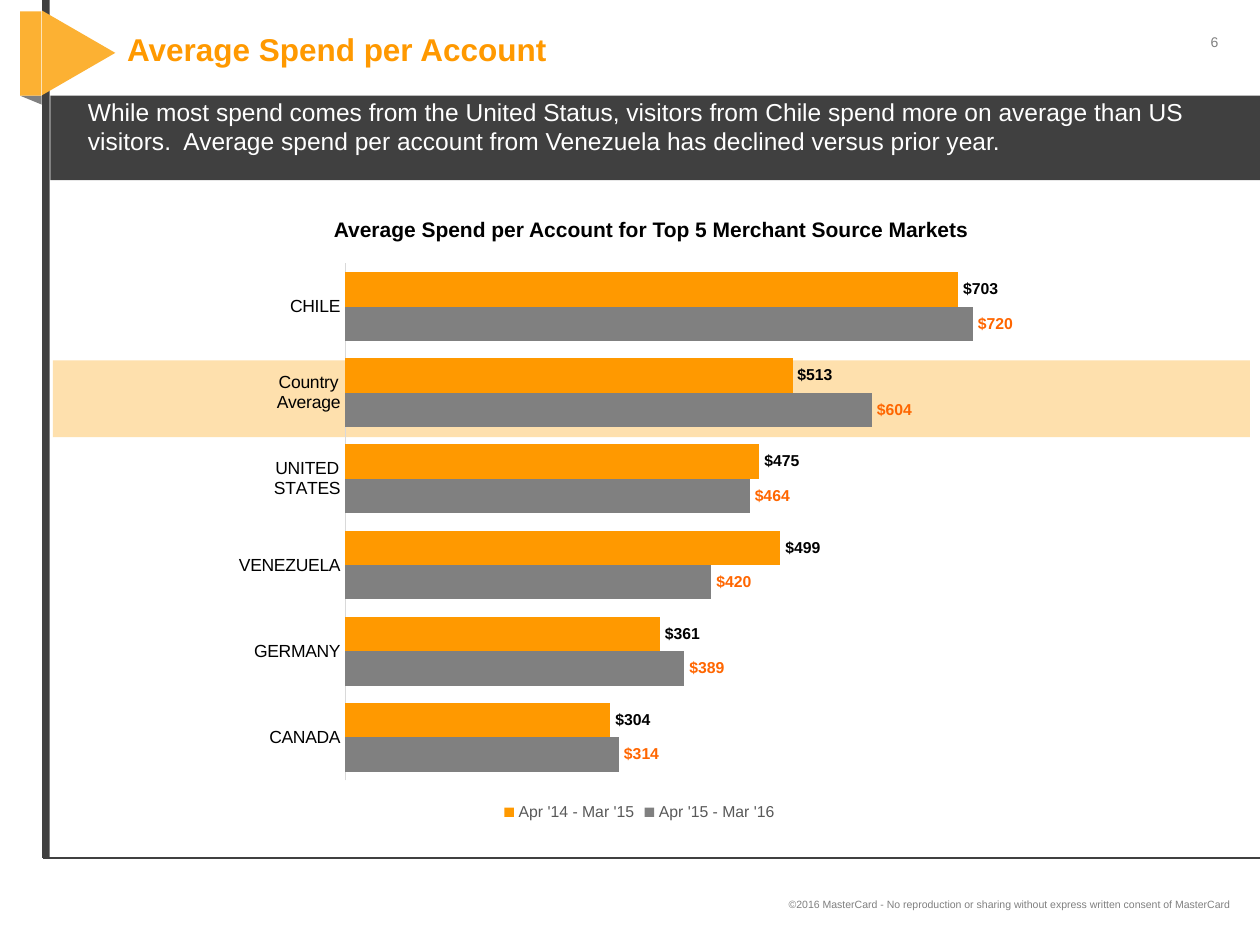
"""Build the average spend per account slide with its clustered bar chart."""
from lxml import etree
from pptx import Presentation, util as u
from pptx.chart.data import CategoryChartData
from pptx.dml.color import RGBColor
from pptx.enum import chart as ec, shapes as es, text as et
from pptx.oxml import parse_xml
from pptx.oxml.ns import nsdecls, qn

ORANGE = RGBColor(0xFF, 0x99, 0x00)
AMBER = RGBColor(0xFC, 0xB1, 0x33)
CREAM = RGBColor(0xFE, 0xE0, 0xAD)
DARK = RGBColor(0x40, 0x40, 0x40)
GREY = RGBColor(0x80, 0x80, 0x80)
LEGEND_GREY = RGBColor(0x59, 0x59, 0x59)
AXIS_GREY = RGBColor(0xD9, 0xD9, 0xD9)
RED_ORANGE = RGBColor(0xFF, 0x66, 0x00)
BLACK = RGBColor(0, 0, 0)
WHITE = RGBColor(0xFF, 0xFF, 0xFF)

COLUMNS, ROWS = 100, 75
CELL = u.Inches(0.1)
FONT = "Arial"
DOLLARS = '"$"#,##0'

LEFT, CENTER, RIGHT = et.PP_ALIGN.LEFT, et.PP_ALIGN.CENTER, et.PP_ALIGN.RIGHT
TOP, MIDDLE = et.MSO_ANCHOR.TOP, et.MSO_ANCHOR.MIDDLE
FORM = es.MSO_SHAPE

BLOCKS = [
    (FORM.RECTANGLE, (3.35, 0, 0.6, 68.1), 0, DARK),
    (FORM.RIGHT_TRIANGLE, (2.1, 7.1, 0.7, 1.7), 270, GREY),
    (FORM.ISOSCELES_TRIANGLE, (2.9, 1.3, 6.7, 5.8), 90, AMBER),
    (FORM.RECTANGLE, (1.6, 0.9, 1.7, 6.7), 0, AMBER),
    (FORM.RECTANGLE, (4.2, 28.6, 95, 6.1), 0, CREAM),
    (FORM.RECTANGLE, (4, 7.6, 96, 6.7), 0, DARK),
]
BASELINE = (3.4, 68.1, 100, 68.1)

TEXTS = [
    ("6", (94.7, 2.2, 3.4, 2.4), CENTER, TOP, {"size": 8, "color": GREY}),
    ("©2016 MasterCard - No reproduction or sharing without express written consent of MasterCard",
     (1.1, 69.1, 97.5, 5.4), RIGHT, MIDDLE, {"size": 6, "color": GREY}),
    ("While most spend comes from the United Status, visitors from Chile spend more on average "
     "than US visitors.  Average spend per account from Venezuela has declined versus prior year.",
     (6, 7.2, 93, 6.6), LEFT, TOP, {"size": 14, "color": WHITE}),
    ("Average Spend per Account", (9.1, 0.9, 79.2, 6.7), LEFT, MIDDLE,
     {"size": 18, "color": ORANGE, "bold": True}),
    ("Average Spend per Account for Top 5 Merchant Source Markets", (23.4, 17.2, 56.6, 2),
     CENTER, MIDDLE, {"size": 12, "color": BLACK, "bold": True}),
]

MARKETS = ["CANADA", "GERMANY", "VENEZUELA", "UNITED STATES", "Country Average", "CHILE"]
SPEND = [
    ("Apr '15 - Mar '16", (314, 389, 420, 464, 604, 720), GREY, RED_ORANGE),
    ("Apr '14 - Mar '15", (304, 361, 499, 475, 513, 703), ORANGE, BLACK),
]
CHART_AREA = (17.4, 20, 66.7, 45.6)
PLOT_SHARES = {"x": 0.15, "y": 0.02, "w": 0.83, "h": 0.9}


def cells(area):
    return [int(length * CELL) for length in area]


def set_font(font, size, color, bold=False):
    for name, value in {"name": FONT, "size": u.Pt(size), "bold": bold}.items():
        setattr(font, name, value)
    font.color.rgb = color


def add_block(slide, form, area, turn, color):
    block = slide.shapes.add_shape(form, *cells(area))
    block.shadow.inherit = False
    block.rotation = turn
    block.fill.solid()
    block.fill.fore_color.rgb = color
    block.line.fill.background()
    if form == FORM.RIGHT_TRIANGLE:
        block.element.spPr.find(qn("a:xfrm")).set("flipH", "1")


def add_baseline(slide):
    baseline = slide.shapes.add_connector(es.MSO_CONNECTOR.STRAIGHT, *cells(BASELINE))
    baseline.line.color.rgb = DARK
    baseline.line.width = u.Pt(0.75)
    etree.SubElement(baseline.element.spPr, qn("a:effectLst"))


def add_text(slide, wording, area, align, anchor, style):
    frame = slide.shapes.add_textbox(*cells(area)).text_frame
    frame.word_wrap = True
    frame.vertical_anchor = anchor
    if area[3] == 2:
        for side in ("left", "top", "right", "bottom"):
            setattr(frame, f"margin_{side}", 0)
    paragraph = frame.paragraphs[0]
    paragraph.alignment = align
    if style["size"] == 18:
        paragraph.line_spacing = u.Pt(16)
    run = paragraph.add_run()
    run.text = wording
    set_font(run.font, **style)


def add_spend_chart(slide):
    data = CategoryChartData(number_format=DOLLARS)
    data.categories = MARKETS
    for period, values, _, _ in SPEND:
        data.add_series(period, values)
    chart = slide.shapes.add_chart(
        ec.XL_CHART_TYPE.BAR_CLUSTERED, *cells(CHART_AREA), data).chart
    set_font(chart.font, 10, BLACK)
    chart.has_title = False
    chart.has_legend = True
    chart.legend.position = ec.XL_LEGEND_POSITION.BOTTOM
    chart.legend.include_in_layout = False
    set_font(chart.legend.font, 9, LEGEND_GREY)

    markets, dollars = chart.category_axis, chart.value_axis
    markets.major_tick_mark = markets.minor_tick_mark = ec.XL_TICK_MARK.NONE
    markets.format.line.color.rgb = AXIS_GREY
    markets.format.line.width = u.Pt(0.75)
    set_font(markets.tick_labels.font, 10, BLACK)
    for name, value in {"minimum_scale": 0, "maximum_scale": 800,
                        "has_major_gridlines": False, "visible": False}.items():
        setattr(dollars, name, value)
    dollars.tick_labels.number_format = DOLLARS
    dollars.tick_labels.number_format_is_linked = False

    plot = chart.plots[0]
    plot.gap_width, plot.overlap, plot.vary_by_categories = 50, 0, False
    for series, (_, _, color, label_color) in zip(plot.series, SPEND):
        series.format.fill.solid()
        series.format.fill.fore_color.rgb = color
        labels = series.data_labels
        for name, value in {"show_value": True, "number_format": DOLLARS,
                            "number_format_is_linked": False,
                            "position": ec.XL_LABEL_POSITION.OUTSIDE_END}.items():
            setattr(labels, name, value)
        set_font(labels.font, 9, label_color, True)

    modes = "".join(f'<c:{side}Mode val="edge"/>' for side in "xy")
    shares = "".join(f'<c:{side} val="{share}"/>' for side, share in PLOT_SHARES.items())
    area = chart.element.chart.plotArea
    for layout in area.findall(qn("c:layout")):
        area.remove(layout)
    area.insert(0, parse_xml(
        f'<c:layout {nsdecls("c")}><c:manualLayout><c:layoutTarget val="inner"/>'
        f'{modes}{shares}</c:manualLayout></c:layout>'))


def main():
    deck = Presentation()
    deck.slide_width, deck.slide_height = COLUMNS * CELL, ROWS * CELL
    slide = deck.slides.add_slide(deck.slide_layouts[6])
    for block in BLOCKS:
        add_block(slide, *block)
    add_baseline(slide)
    for wording in TEXTS:
        add_text(slide, *wording)
    add_spend_chart(slide)
    deck.save("out.pptx")


if __name__ == "__main__":
    main()
